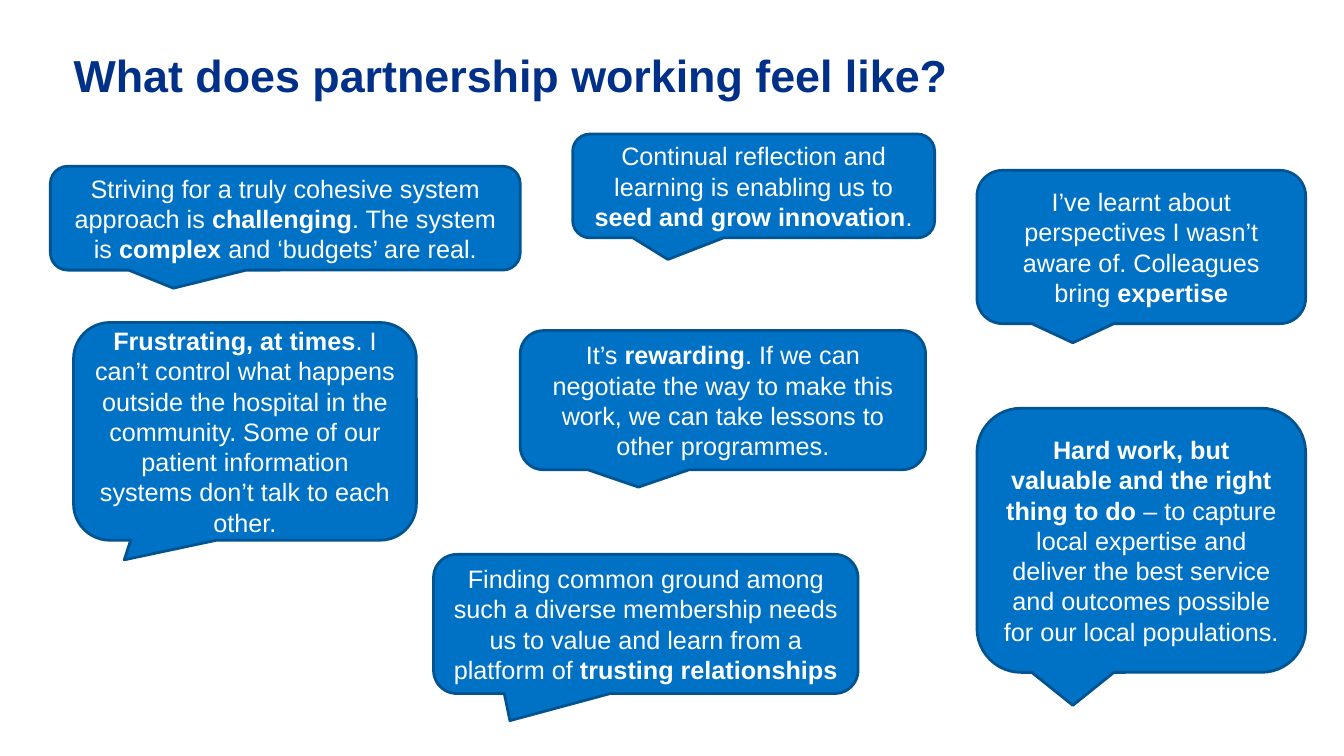
from dataclasses import dataclass

from pptx import Presentation
from pptx.dml.color import RGBColor
from pptx.enum.shapes import MSO_SHAPE
from pptx.enum.text import MSO_ANCHOR, PP_ALIGN
from pptx.util import Emu, Pt

CALLOUT_SHAPE = MSO_SHAPE.ROUNDED_RECTANGULAR_CALLOUT
MIDDLE = MSO_ANCHOR.MIDDLE
CENTER = PP_ALIGN.CENTER
EMU_PER_PX = 9144
FONT_NAME = "Arial"
BOLD_MARK = "*"
CORNER = 0.16667
COLORS = {
    "title": "003087",
    "bubble": "0072C6",
    "outline": "005492",
    "text": "FFFFFF",
}


@dataclass(frozen=True)
class Bubble:
    left: int
    top: int
    width: int
    height: int
    text: str
    tail_x: float = -0.20833
    tail_y: float = 0.625


BUBBLES = [
    Bubble(73, 320, 340, 216,
           "*Frustrating, at times*. I can’t control what happens outside the hospital "
           "in the community. Some of our patient information systems don’t talk to "
           "each other.", -0.352, 0.59),
    Bubble(516, 328, 402, 138,
           "It’s *rewarding*. If we can negotiate the way to make this work, we can "
           "take lessons to other programmes."),
    Bubble(969, 169, 326, 152,
           "I’ve learnt about perspectives I wasn’t aware of. Colleagues bring "
           "*expertise*"),
    Bubble(969, 405, 326, 262,
           "*Hard work, but valuable and the right thing to do *– to capture local "
           "expertise and deliver the best service and outcomes possible for our "
           "local populations."),
    Bubble(568, 133, 359, 103,
           "Continual reflection and learning is enabling us to "
           "*seed and grow innovation*.", -0.237, 0.708),
    Bubble(430, 550, 421, 138,
           "Finding common ground among such a diverse membership needs us to value "
           "and learn from a platform of *trusting relationships*", -0.32, 0.695),
    Bubble(50, 165, 466, 103,
           "Striving for a truly cohesive system approach is *challenging*. The system "
           "is *complex *and ‘budgets’ are real.", -0.238, 0.674),
]


def px(value: int) -> Emu:
    return Emu(value * EMU_PER_PX)


def color(name: str) -> RGBColor:
    return RGBColor.from_string(COLORS[name])


def style_font(font, size: int, color_name: str, bold: bool) -> None:
    font.name = FONT_NAME
    font.size = Pt(size)
    font.bold = bold
    font.color.rgb = color(color_name)


def add_title(slide, text: str) -> None:
    shape = slide.shapes.add_textbox(px(73), px(44), px(1192), px(59))
    text_frame = shape.text_frame
    text_frame.word_wrap = True
    text_frame.vertical_anchor = MIDDLE
    text_frame.margin_left = text_frame.margin_right = 0
    text_frame.margin_top = text_frame.margin_bottom = 0
    text_frame.text = text
    style_font(text_frame.paragraphs[0].runs[0].font, 32, "title", True)


def add_bubble(slide, bubble: Bubble) -> None:
    shape = slide.shapes.add_shape(
        CALLOUT_SHAPE, px(bubble.left), px(bubble.top), px(bubble.width), px(bubble.height)
    )
    for index, value in enumerate((bubble.tail_x, bubble.tail_y, CORNER)):
        shape.adjustments[index] = value
    shape.shadow.inherit = False
    shape.fill.solid()
    shape.fill.fore_color.rgb = color("bubble")
    shape.line.color.rgb = color("outline")
    shape.line.width = Pt(2)
    text_frame = shape.text_frame
    text_frame.word_wrap = True
    text_frame.vertical_anchor = MIDDLE
    paragraph = text_frame.paragraphs[0]
    paragraph.alignment = CENTER
    for index, part in enumerate(bubble.text.split(BOLD_MARK)):
        if part:
            run = paragraph.add_run()
            run.text = part
            style_font(run.font, 18, "text", index % 2 == 1)


def main() -> None:
    presentation = Presentation()
    presentation.slide_width = px(1333)
    presentation.slide_height = px(750)
    slide = presentation.slides.add_slide(presentation.slide_layouts[6])
    add_title(slide, "What does partnership working feel like?")
    for bubble in BUBBLES:
        add_bubble(slide, bubble)
    presentation.save("out.pptx")


if __name__ == "__main__":
    main()
